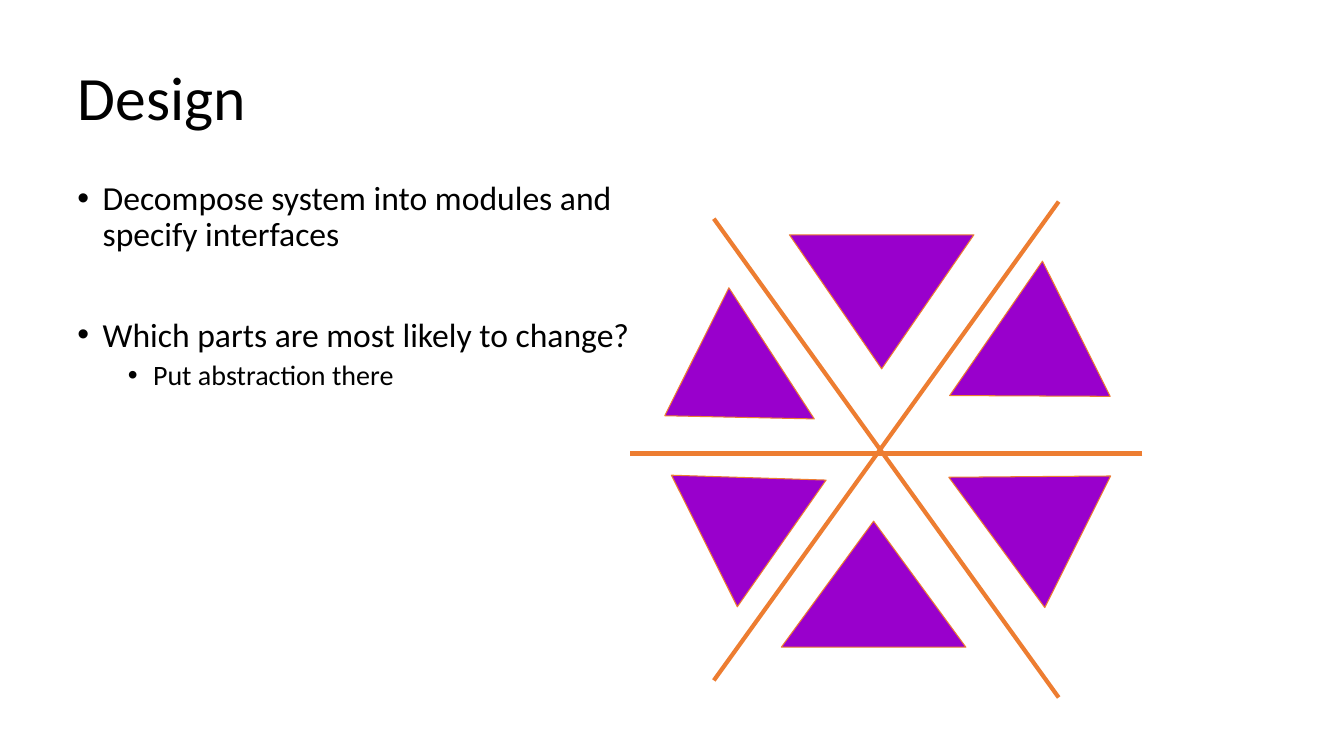
from lxml import etree
from pptx import Presentation
from pptx.dml.color import RGBColor
from pptx.enum.shapes import MSO_CONNECTOR, MSO_SHAPE
from pptx.enum.text import MSO_ANCHOR, MSO_AUTO_SIZE, PP_ALIGN
from pptx.oxml.ns import qn
from pptx.util import Inches, Pt

STRAIGHT = MSO_CONNECTOR.STRAIGHT
TRIANGLE = MSO_SHAPE.ISOSCELES_TRIANGLE
MIDDLE = MSO_ANCHOR.MIDDLE
NO_AUTOFIT = MSO_AUTO_SIZE.NONE
LEFT = PP_ALIGN.LEFT

BLACK = RGBColor(0x00, 0x00, 0x00)
PURPLE = RGBColor(0x99, 0x00, 0xCC)
ORANGE = RGBColor(0xED, 0x7D, 0x31)
FONT = "Calibri"

# left, top, width, height, rotation, flips, apex position
MODULES = [
    (7.83, 2.33, 1.83, 1.33, 0, "V", 0.5),
    (7.75, 5.17, 1.83, 1.25, 0, "", 0.5),
    (6.86, 4.39, 1.46, 1.35, 63.4, "", 0.5),
    (9.32, 4.34, 1.46, 1.43, 296.6, "H", 0.5),
    (6.8, 3.12, 1.42, 1.34, 296.6, "V", 0.448),
    (9.29, 2.87, 1.5, 1.42, 63.4, "HV", 0.48),
]

# start x, start y, end x, end y
INTERFACES = [
    (7.08, 6.75, 10.5, 2),
    (10.5, 6.92, 7.08, 2.17),
    (11.33, 4.5, 6.25, 4.5),
]

# text, size, left margin in inches, space before in points
BULLETS = [
    ("Decompose system into modules and specify interfaces", 24, 0.25, 10),
    ("Which parts are most likely to change?", 24, 0.25, 46),
    ("Put abstraction there", 20, 0.75, 5),
]


def add_run(paragraph, text, size):
    run = paragraph.add_run()
    run.text = text
    run.font.name = FONT
    run.font.size = Pt(size)
    run.font.color.rgb = BLACK


def set_title(slide, text):
    title = slide.shapes.title
    title.left, title.top = Inches(0.67), Inches(0.5)
    title.width, title.height = Inches(11.78), Inches(1)
    frame = title.text_frame
    frame.auto_size = NO_AUTOFIT
    frame.vertical_anchor = MIDDLE
    paragraph = frame.paragraphs[0]
    paragraph.alignment = LEFT
    paragraph.line_spacing = 0.9
    add_run(paragraph, text, 44)


def add_bullet(paragraph, text, size, margin, space_before):
    paragraph.line_spacing = 0.9
    paragraph.space_before = Pt(space_before)
    properties = paragraph._p.get_or_add_pPr()
    properties.set("marL", str(Inches(margin)))
    properties.set("indent", str(Inches(-0.25)))
    etree.SubElement(properties, qn("a:buFont")).set("typeface", "Arial")
    etree.SubElement(properties, qn("a:buChar")).set("char", "•")
    add_run(paragraph, text, size)


def add_bullet_list(slide, bullets):
    box = slide.shapes.add_textbox(
        Inches(0.67), Inches(1.75), Inches(5.94), Inches(4.83))
    frame = box.text_frame
    frame.word_wrap = True
    for index, bullet in enumerate(bullets):
        paragraph = frame.add_paragraph() if index else frame.paragraphs[0]
        add_bullet(paragraph, *bullet)


def add_module(slide, left, top, width, height, rotation, flips, apex):
    shape = slide.shapes.add_shape(
        TRIANGLE, Inches(left), Inches(top), Inches(width), Inches(height))
    shape.adjustments[0] = apex
    shape.rotation = rotation
    for axis in flips:
        shape.element.spPr.xfrm.set("flip" + axis, "1")
    shape.shadow.inherit = False
    shape.fill.solid()
    shape.fill.fore_color.rgb = PURPLE
    shape.line.color.rgb = ORANGE
    shape.line.width = Pt(0.75)


def add_interface(slide, start_x, start_y, end_x, end_y):
    line = slide.shapes.add_connector(
        STRAIGHT, Inches(start_x), Inches(start_y), Inches(end_x), Inches(end_y))
    line.line.color.rgb = ORANGE
    line.line.width = Pt(3)
    etree.SubElement(line.element.spPr, qn("a:effectLst"))


def main():
    presentation = Presentation()
    presentation.slide_width = Inches(13.33)
    presentation.slide_height = Inches(7.5)
    slide = presentation.slides.add_slide(presentation.slide_layouts[5])

    # Diagram modules
    for module in MODULES:
        add_module(slide, *module)

    # Text
    set_title(slide, "Design")
    add_bullet_list(slide, BULLETS)

    # Interfaces between the modules
    for interface in INTERFACES:
        add_interface(slide, *interface)

    presentation.save("out.pptx")


if __name__ == "__main__":
    main()
